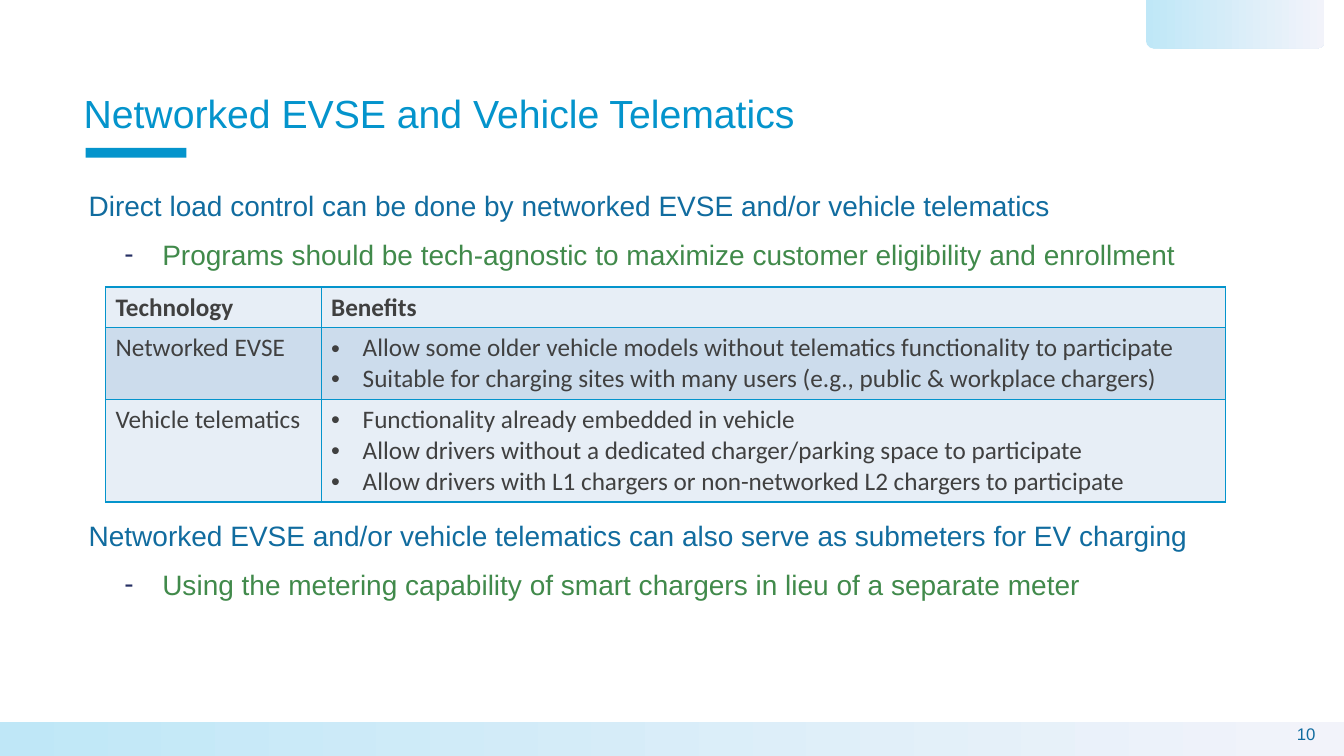
"""Builds the slide on networked EVSE and vehicle telematics."""
from lxml.etree import SubElement
from pptx import Presentation
from pptx.dml.color import RGBColor
from pptx.enum.shapes import MSO_SHAPE
from pptx.enum.text import MSO_ANCHOR, PP_ALIGN
from pptx.oxml.ns import qn
from pptx.util import Pt

CYAN = RGBColor(0x04, 0x94, 0xCC)
BLUE = RGBColor(0x11, 0x6C, 0x9F)
GREEN = RGBColor(0x41, 0x8A, 0x4B)
NAVY = RGBColor(0x26, 0x30, 0x64)
GREY = RGBColor(0x40, 0x40, 0x40)
SKY = RGBColor(0xBF, 0xE7, 0xF7)
MIST = RGBColor(0xF2, 0xF3, 0xFA)
PALE = RGBColor(0xE7, 0xEE, 0xF6)
BAND = RGBColor(0xCC, 0xDC, 0xEC)


def write(para, text, size, color, font="Arial", bold=False):
    para.text = text
    para.font.size = Pt(size)
    para.font.name = font
    para.font.bold = bold
    para.font.color.rgb = color


def bullet(para, char, left, hang, color):
    props = para._p.get_or_add_pPr()
    props.set("marL", str(Pt(left)))
    props.set("indent", str(-Pt(hang)))
    tint = SubElement(props, qn("a:buClr"))
    SubElement(tint, qn("a:srgbClr"), val=str(color))
    SubElement(props, qn("a:buFont"), typeface="Arial")
    SubElement(props, qn("a:buChar"), char=char)


deck = Presentation()
deck.slide_width, deck.slide_height = Pt(960), Pt(540)
slide = deck.slides.add_slide(deck.slide_layouts[6])
shapes = slide.shapes

footer = shapes.add_shape(MSO_SHAPE.RECTANGLE, Pt(0), Pt(515.5), Pt(960), Pt(24.5))
tab = shapes.add_shape(MSO_SHAPE.ROUND_2_SAME_RECTANGLE, Pt(818.5), Pt(0), Pt(127.7), Pt(34.8))
tab.adjustments[0], tab.adjustments[1] = 0, 0.17
for strip in (footer, tab):
    strip.shadow.inherit = False
    strip.line.fill.background()
    strip.fill.gradient()
    strip.fill.gradient_angle = 0
    for stop, color in zip(strip.fill.gradient_stops, (SKY, MIST)):
        stop.color.rgb = color

accent = shapes.add_shape(MSO_SHAPE.RECTANGLE, Pt(61.2), Pt(105.6), Pt(72), Pt(7))
accent.shadow.inherit = False
accent.fill.solid()
accent.fill.fore_color.rgb = CYAN
accent.line.fill.background()

number = shapes.add_textbox(Pt(896.4), Pt(515.5), Pt(50.4), Pt(17.3)).text_frame
number.word_wrap = True
number.vertical_anchor = MSO_ANCHOR.MIDDLE
write(number.paragraphs[0], "10", 12, BLUE)
number.paragraphs[0].alignment = PP_ALIGN.RIGHT

title = shapes.add_textbox(Pt(52.6), Pt(44.6), Pt(846), Pt(72)).text_frame
title.word_wrap = True
title.vertical_anchor = MSO_ANCHOR.MIDDLE
write(title.paragraphs[0], "Networked EVSE and Vehicle Telematics", 28, CYAN)

points = [
    (126, "Direct load control can be done by networked EVSE and/or vehicle telematics",
     "Programs should be tech-agnostic to maximize customer eligibility and enrollment"),
    (361.7, "Networked EVSE and/or vehicle telematics can also serve as submeters for EV charging",
     "Using the metering capability of smart chargers in lieu of a separate meter"),
]
for top, head, detail in points:
    body = shapes.add_textbox(Pt(52.6), Pt(top), Pt(846), Pt(74)).text_frame
    body.word_wrap = True
    body.margin_top = body.margin_bottom = Pt(7.2)
    lead, sub = body.paragraphs[0], body.add_paragraph()
    lead._p.get_or_add_pPr().set("marL", str(Pt(3.6)))
    write(lead, head, 20, BLUE)
    sub.level = 1
    bullet(sub, "-", 56.2, 27, NAVY)
    write(sub, detail, 20, GREEN)
    sub.space_before = Pt(10)
    lead.line_spacing = sub.line_spacing = 1.05

rows = [
    ("Technology", ["Benefits"], 29.2, PALE),
    ("Networked EVSE",
     ["Allow some older vehicle models without telematics functionality to participate",
      "Suitable for charging sites with many users (e.g., public & workplace chargers)"],
     51.2, BAND),
    ("Vehicle telematics",
     ["Functionality already embedded in vehicle",
      "Allow drivers without a dedicated charger/parking space to participate",
      "Allow drivers with L1 chargers or non-networked L2 chargers to participate"],
     73.2, PALE),
]
table = shapes.add_table(3, 2, Pt(75.4), Pt(205), Pt(800), Pt(153.6)).table
table.horz_banding = False
table.columns[0].width, table.columns[1].width = Pt(154), Pt(646)
for r, (tech, gains, height, shade) in enumerate(rows):
    table.rows[r].height = Pt(height)
    for c, lines in enumerate(([tech], gains)):
        cell = table.cell(r, c)
        for i, line in enumerate(lines):
            para = cell.text_frame.add_paragraph() if i else cell.text_frame.paragraphs[0]
            if r and c:
                bullet(para, "•", 22.5, 22.5, GREY)
            write(para, line, 18, GREY, "Calibri", r == 0)
        props = cell._tc.get_or_add_tcPr()
        for side in ("a:lnL", "a:lnR", "a:lnT", "a:lnB"):
            edge = SubElement(props, qn(side), w=str(Pt(1)))
            paint = SubElement(edge, qn("a:solidFill"))
            SubElement(paint, qn("a:srgbClr"), val=str(CYAN))
        cell.fill.solid()
        cell.fill.fore_color.rgb = shade

deck.save("out.pptx")
